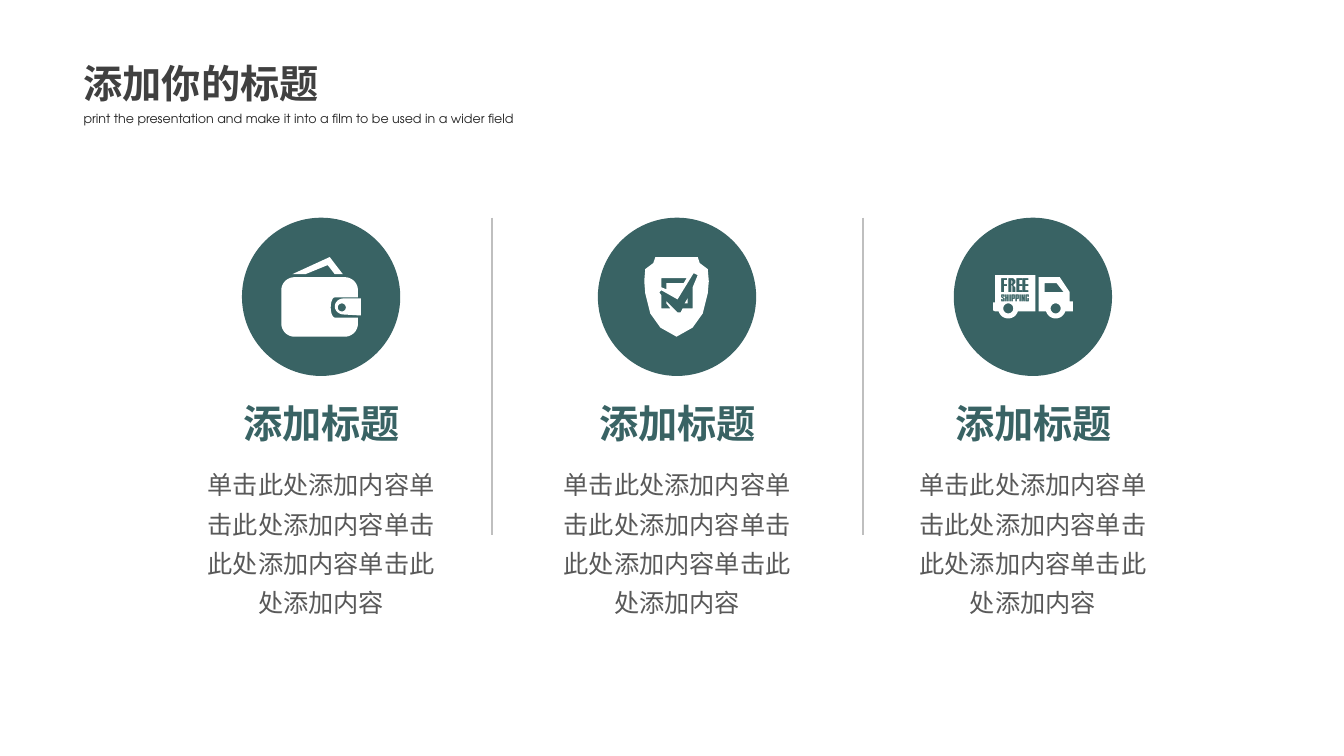
from math import cos, radians, sin

from lxml.etree import SubElement
from pptx import Presentation
from pptx.dml.color import RGBColor
from pptx.enum.shapes import MSO_CONNECTOR as Connector, MSO_SHAPE as Shape
from pptx.enum.text import MSO_ANCHOR as Anchor, MSO_AUTO_SIZE as AutoSize, PP_ALIGN as Align
from pptx.oxml.ns import qn
from pptx.util import Pt

PX = 9144
TEAL = RGBColor(0x39, 0x63, 0x64)
WHITE = RGBColor(0xFF, 0xFF, 0xFF)
TITLE_GRAY = RGBColor(0x40, 0x40, 0x40)
SUBTITLE_GRAY = RGBColor(0x26, 0x26, 0x26)
BODY_GRAY = RGBColor(0x59, 0x59, 0x59)
RULE_GRAY = RGBColor(0xBF, 0xBF, 0xBF)
CJK = "Noto Sans CJK SC"

GLYPHS = {
    "F": [[(0, 0), (6, 0), (6, 2), (3, 2), (3, 6), (6, 6), (6, 8), (3, 8), (3, 14), (0, 14)]],
    "R": [[(0, 0), (5, 0), (7, 2), (7, 5), (5, 7), (7, 9), (7, 14), (4, 14), (4, 8), (3, 7),
           (3, 14), (0, 14)], [(3, 2), (4, 3), (4, 5), (3, 6)]],
    "E": [[(0, 0), (6, 0), (6, 2), (3, 2), (3, 6), (6, 6), (6, 8), (3, 8), (3, 12), (6, 12),
           (6, 14), (0, 14)]],
    "S": [[(0, 0), (7, 0), (7, 5), (4, 5), (4, 2), (3, 2), (3, 5), (7, 8), (7, 14), (0, 14),
           (0, 9), (3, 9), (3, 12), (4, 12), (4, 9), (0, 6)]],
    "H": [[(0, 0), (3, 0), (3, 6), (4, 6), (4, 0), (7, 0), (7, 14), (4, 14), (4, 8), (3, 8),
           (3, 14), (0, 14)]],
    "I": [[(0, 0), (3, 0), (3, 14), (0, 14)]],
    "P": [[(0, 0), (7, 0), (7, 9), (3, 9), (3, 14), (0, 14)], [(3, 2), (4, 2), (4, 7), (3, 7)]],
    "N": [[(0, 0), (3, 0), (4, 6), (4, 0), (7, 0), (7, 14), (4, 14), (3, 8), (3, 14), (0, 14)]],
    "G": [[(0, 0), (7, 0), (7, 5), (4, 5), (4, 2), (3, 2), (3, 12), (4, 12), (4, 9), (4, 7),
           (7, 7), (7, 14), (0, 14)]],
}


def arc(x, y, rx, ry, start, end, steps=12):
    angles = [radians(start + (end - start) * step / steps) for step in range(steps + 1)]
    return [(x + rx * cos(angle), y + ry * sin(angle)) for angle in angles]


def disc(x, y, radius):
    return arc(x, y, radius, radius, 0, 360, 24)


def lettering(word, lefts, top, scale):
    return [[(left + x * scale, top + y * scale) for x, y in outline]
            for letter, left in zip(word, lefts) for outline in GLYPHS[letter]]


def wallet():
    body = [point for x, y, start in ((342, 321, 0), (292, 321, 90), (292, 288, 180), (342, 288, 270))
            for point in arc(x, y, 13, 13, start, start + 90)]
    notch = [(355, 295)] + arc(332, 305, 4, 10, 270, 90) + [(355, 315)]
    clasp = [(358, 296)] + arc(341, 304, 9, 8, 270, 90) + [(358, 313)]
    banknote = [(325, 263), (303, 272), (290, 272), (327, 255), (340, 272), (332, 272)]
    return [body + notch, clasp, disc(339, 305, 4), banknote]


def shield():
    right = [(692, 255), (694, 261), (702, 267), (703, 279), (702, 291), (697, 311),
             (687, 325), (671, 334)]
    left = [(1342 - x, y) for x, y in reversed(right)]
    box_top = [(656, 276), (656, 285), (661, 287), (661, 281), (678, 281), (681, 276)]
    box_corner = [(679, 301), (682, 301), (682, 296)]
    tick = [(654, 290), (656, 293), (656, 306), (665, 306), (661, 301), (661, 299), (672, 310),
            (675, 310), (677, 306), (687, 306), (687, 285), (692, 273), (688, 271), (672, 297),
            (656, 288)]
    return [right + left, box_top, box_corner, tick]


def truck():
    cargo = [(1027, 273), (987, 273), (987, 300), (985, 300), (985, 308), (987, 309)]
    cab = [(1064, 309), (1064, 299), (1061, 299), (1061, 290), (1051, 275), (1030, 275), (1030, 309)]
    window = [(1055, 290), (1036, 290), (1036, 281), (1048, 281)]
    return [cargo + arc(1000, 306, 10, 10, 163, 17) + [(1027, 309)],
            cab + arc(1047, 306, 10, 10, 163, 17), window,
            disc(1000, 306, 5), disc(1047, 306, 5),
            *lettering("FREE", (993, 1000, 1008, 1014), 276, 1),
            *lettering("SHIPPING", (993, 997, 1001, 1003, 1007, 1011, 1013, 1017), 292, 0.5)]


def write(frame, text, *, size, color, latin=CJK, bold=False, align=Align.LEFT,
          anchor=Anchor.TOP, spacing=1.0, after=0, wrap=True, grow=False):
    frame.word_wrap = wrap
    frame.vertical_anchor = anchor
    frame.auto_size = AutoSize.SHAPE_TO_FIT_TEXT if grow else AutoSize.NONE
    paragraph = frame.paragraphs[0]
    paragraph.alignment = align
    paragraph.line_spacing = spacing
    paragraph.space_before = Pt(0)
    paragraph.space_after = Pt(after)
    run = paragraph.add_run()
    run.text = text
    run.font.size = Pt(size)
    run.font.bold = bold
    run.font.name = latin
    run.font.color.rgb = color
    SubElement(run.font._element, qn("a:ea")).set("typeface", CJK)


class Deck:
    """Draws styled elements on one slide, with lengths in px."""

    def __init__(self, width, height):
        self.presentation = Presentation()
        self.presentation.slide_width = width * PX
        self.presentation.slide_height = height * PX
        self.slide = self.presentation.slides.add_slide(self.presentation.slide_layouts[5])
        self.shapes = self.slide.shapes

    def title(self, text, left, top, width, height, **style):
        heading = self.shapes.title
        heading.left, heading.top = left * PX, top * PX
        heading.width, heading.height = width * PX, height * PX
        write(heading.text_frame, text, **style)

    def text(self, text, left, top, width, height, **style):
        box = self.shapes.add_textbox(left * PX, top * PX, width * PX, height * PX)
        write(box.text_frame, text, **style)

    def paint(self, shape, color):
        shape.shadow.inherit = False
        shape.fill.solid()
        shape.fill.fore_color.rgb = color
        shape.line.fill.background()

    def circle(self, left, top, size, color):
        self.paint(self.shapes.add_shape(Shape.OVAL, left * PX, top * PX, size * PX, size * PX), color)

    def icon(self, outlines, color):
        first, *others = [[(x * PX, y * PX) for x, y in outline] for outline in outlines]
        builder = self.shapes.build_freeform(*first[0])
        builder.add_line_segments(first[1:])
        for outline in others:
            builder.move_to(*outline[0])
            builder.add_line_segments(outline[1:])
        self.paint(builder.convert_to_shape(), color)

    def divider(self, x, top, bottom, color):
        rule = self.shapes.add_connector(Connector.STRAIGHT, x * PX, top * PX, x * PX, bottom * PX)
        rule.line.color.rgb = color
        rule.line.width = Pt(1)
        SubElement(rule._element.spPr, qn("a:effectLst"))


def main():
    deck = Deck(1333, 750)
    deck.title("添加你的标题", 73, 54, 256, 57, size=28, color=TITLE_GRAY, latin="Arial",
               bold=True, wrap=False, grow=True)
    deck.text("print the presentation and make it into a film to be used in a wider field",
              73, 105, 452, 25, size=9, color=SUBTITLE_GRAY, latin="TeX Gyre Adventor",
              wrap=False, grow=True)
    for column, outlines in enumerate((wallet(), shield(), truck())):
        left = 240 + 353 * column
        deck.circle(left, 216, 157, TEAL)
        deck.icon(outlines, WHITE)
        deck.text("添加标题", left - 33, 396, 224, 33, size=28, color=TEAL, bold=True,
                  align=Align.CENTER, anchor=Anchor.MIDDLE, spacing=1.3)
        deck.text("单击此处添加内容" * 4, left - 49, 452, 255, 204, size=18, color=BODY_GRAY,
                  align=Align.CENTER, spacing=1.3, after=6)
    for x in (488, 856):
        deck.divider(x, 216, 531, RULE_GRAY)
    deck.presentation.save("out.pptx")


if __name__ == "__main__":
    main()
